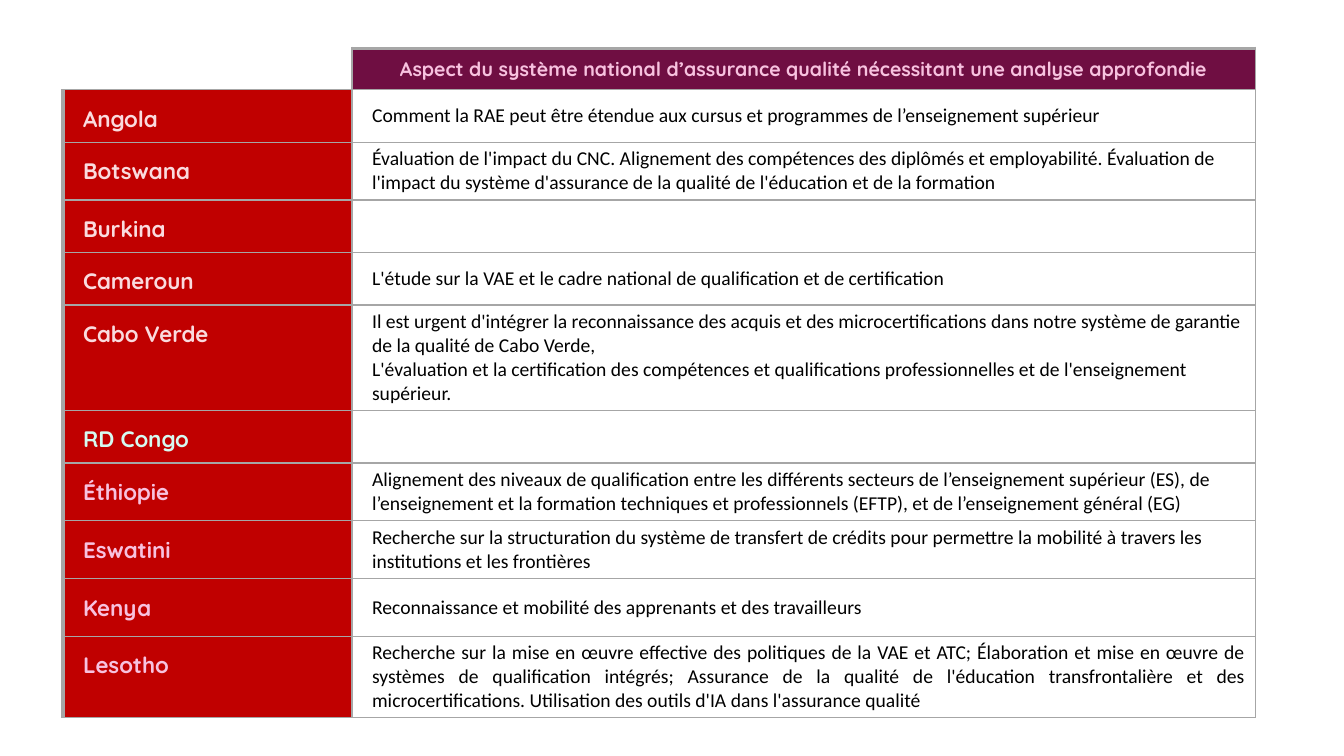
from lxml import etree
from pptx import Presentation
from pptx.dml.color import RGBColor
from pptx.enum.text import MSO_ANCHOR, PP_ALIGN
from pptx.oxml.ns import qn
from pptx.util import Pt

TOP, MIDDLE = MSO_ANCHOR.TOP, MSO_ANCHOR.MIDDLE
LEFT, CENTER, JUSTIFY = PP_ALIGN.LEFT, PP_ALIGN.CENTER, PP_ALIGN.JUSTIFY

GREY, RED, PLUM, WHITE, BLACK = "A6A6A6", "C00000", "6F0E42", "FFFFFF", "000000"
ROSE, MINT, PINK = "FADBDE", "D5FBF2", "F7C2DF"
THIN, THICK = 1, 3

HEADING = "Aspect du système national d’assurance qualité nécessitant une analyse approfondie"
# Country, colour of its name, paragraphs of the aspect, alignment
COUNTRIES = [
    ("Angola", ROSE, ["Comment la RAE peut être étendue aux cursus et programmes de "
                      "l’enseignement supérieur"], LEFT),
    ("Botswana", ROSE, ["Évaluation de l'impact du CNC. Alignement des compétences des diplômés "
                        "et employabilité. Évaluation de l'impact du système d'assurance de la "
                        "qualité de l'éducation et de la formation"], LEFT),
    ("Burkina", ROSE, [], LEFT),
    ("Cameroun", ROSE, ["L'étude sur la VAE et le cadre national de qualification et de "
                        "certification"], LEFT),
    ("Cabo Verde", ROSE, ["Il est urgent d'intégrer la reconnaissance des acquis et des "
                          "microcertifications dans notre système de garantie de la qualité de "
                          "Cabo Verde,",
                          "L'évaluation et la certification des compétences et qualifications "
                          "professionnelles et de l'enseignement supérieur."], LEFT),
    ("RD Congo", MINT, [], LEFT),
    ("Éthiopie", PINK, ["Alignement des niveaux de qualification entre les différents secteurs de "
                        "l’enseignement supérieur (ES), de l’enseignement et la formation "
                        "techniques et professionnels (EFTP), et de l’enseignement général (EG)"],
     LEFT),
    ("Eswatini", PINK, ["Recherche sur la structuration du système de transfert de crédits pour "
                        "permettre la mobilité à travers les institutions et les frontières"],
     LEFT),
    ("Kenya", PINK, ["Reconnaissance et mobilité des apprenants et des travailleurs"], LEFT),
    ("Lesotho", PINK, ["Recherche sur la mise en œuvre effective des politiques de la VAE et ATC; "
                       "Élaboration et mise en œuvre de systèmes de qualification intégrés; "
                       "Assurance de la qualité de l'éducation transfrontalière et des "
                       "microcertifications. Utilisation des outils d'IA dans l'assurance "
                       "qualité"], JUSTIFY),
]
COLUMN_WIDTHS = [206.5, 645.5]
ROW_HEIGHTS = [29.5] + [37.5] * 8 + [41.2] * 2

HEADING_FONT = {"name": "Quicksand", "size": Pt(14), "bold": True}
COUNTRY_FONT = {"name": "Quicksand", "size": Pt(16), "bold": True}
ASPECT_FONT = {"name": "Calibri", "size": Pt(14), "bold": False}
HEADING_FORMAT = {"vertical_anchor": MIDDLE}
COUNTRY_FORMAT = {"vertical_anchor": TOP, "margin_left": Pt(14.4), "margin_top": Pt(10.8)}
ASPECT_FORMAT = {"vertical_anchor": MIDDLE, "margin_left": Pt(14.4)}


def rgb(color):
    return RGBColor.from_string(color)


def apply(target, values):
    for key, value in values.items():
        setattr(target, key, value)


def set_borders(cell, left=THIN, right=THIN, top=THIN, bottom=THIN):
    """Draw grey borders of the given widths; a width of 0 hides the side."""
    properties = cell._tc.get_or_add_tcPr()
    for side, width in zip("LRTB", (left, right, top, bottom)):
        line = etree.SubElement(properties, qn(f"a:ln{side}"), w=str(Pt(width)))
        if width:
            paint = etree.SubElement(line, qn("a:solidFill"))
            etree.SubElement(paint, qn("a:srgbClr"), val=GREY)
        else:
            etree.SubElement(line, qn("a:noFill"))


def fill_cell(cell, color):
    cell.fill.solid()
    cell.fill.fore_color.rgb = rgb(color)


def write_cell(cell, paragraphs, font, color, cell_format, align=LEFT):
    apply(cell, cell_format)
    frame = cell.text_frame
    for index, text in enumerate(paragraphs):
        paragraph = frame.add_paragraph() if index else frame.paragraphs[0]
        paragraph.alignment = align
        run = paragraph.add_run()
        run.text = text
        apply(run.font, font)
        run.font.color.rgb = rgb(color)


def add_grid(slide):
    frame = slide.shapes.add_table(len(ROW_HEIGHTS), len(COLUMN_WIDTHS),
                                   Pt(44.9), Pt(34.6), Pt(852), Pt(474.5))
    grid = frame.table
    apply(grid, {"first_row": False, "horz_banding": False})
    for column, width in zip(grid.columns, COLUMN_WIDTHS):
        column.width = Pt(width)
    for row, height in zip(grid.rows, ROW_HEIGHTS):
        row.height = Pt(height)
    frame.height = Pt(474.5)
    return grid


def main():
    deck = Presentation()
    apply(deck, {"slide_width": Pt(960), "slide_height": Pt(540)})
    slide = deck.slides.add_slide(deck.slide_layouts[6])
    grid = add_grid(slide)

    # Heading row with its open corner
    corner, heading = grid.cell(0, 0), grid.cell(0, 1)
    set_borders(corner, left=0, top=0)
    corner.fill.background()
    set_borders(heading, top=THICK)
    fill_cell(heading, PLUM)
    write_cell(heading, [HEADING], HEADING_FONT, PINK, HEADING_FORMAT, CENTER)

    # One row per country
    for row, (name, name_color, aspects, align) in enumerate(COUNTRIES, start=1):
        country, aspect = grid.cell(row, 0), grid.cell(row, 1)
        set_borders(country, left=THICK)
        fill_cell(country, RED)
        write_cell(country, [name], COUNTRY_FONT, name_color, COUNTRY_FORMAT)
        set_borders(aspect)
        fill_cell(aspect, WHITE)
        write_cell(aspect, aspects, ASPECT_FONT, BLACK, ASPECT_FORMAT, align)

    deck.save("out.pptx")


if __name__ == "__main__":
    main()
